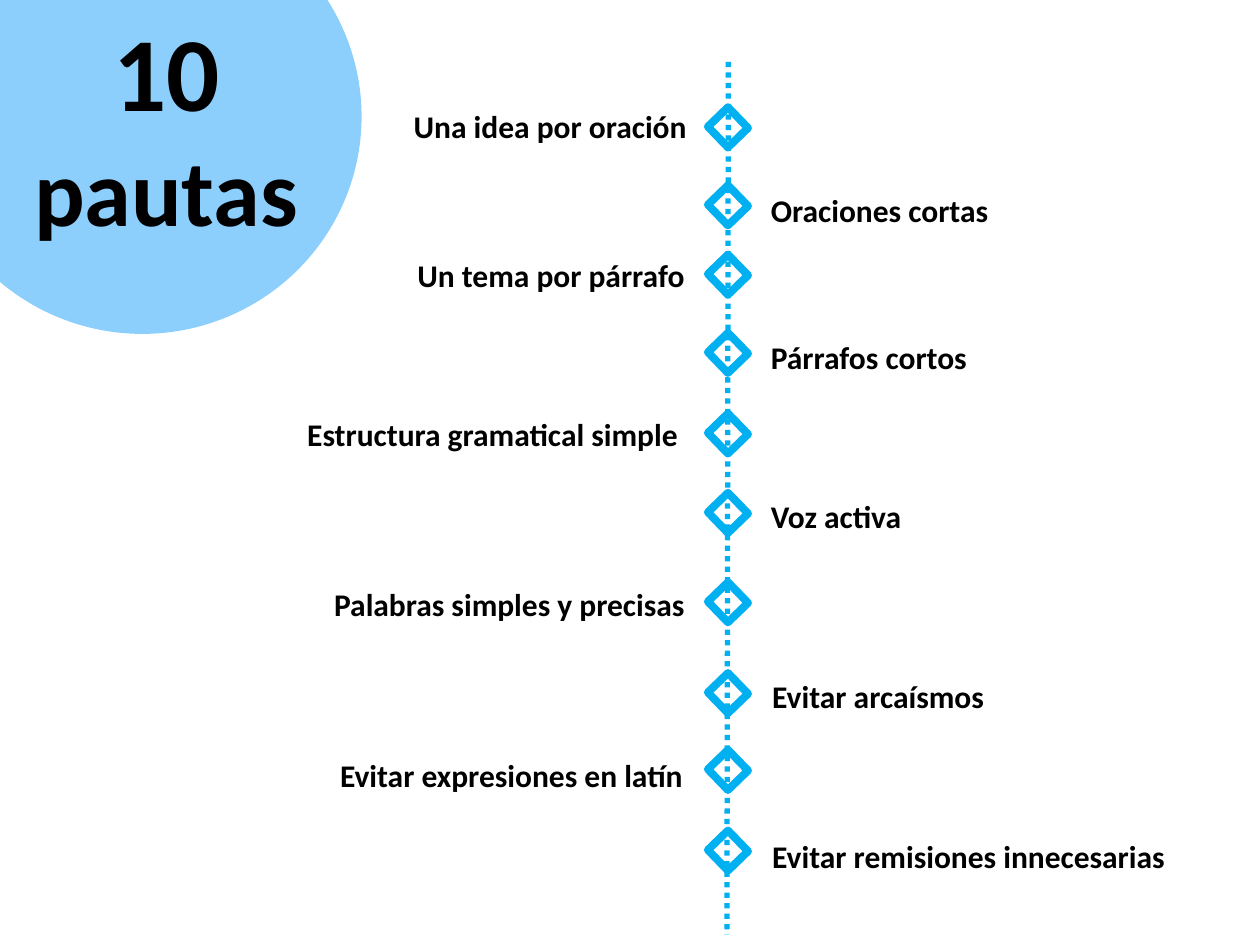
from lxml import etree
from pptx import Presentation
from pptx.dml.color import RGBColor
from pptx.enum import dml, shapes, text
from pptx.oxml.ns import qn
from pptx.util import Pt

BLUE, SKY, BLACK = "00B0F0", "8CCFFC", "000000"
LABEL_W, LABEL_H = 282, 37.5
MARKER_X, MARKER_W, MARKER_H = 407.7, 16.5, 16

# text, marker top, label top, label edge nearest the timeline
GUIDELINES = [
    ("Una idea por oración", 64.8, 49, 399.6),
    ("Oraciones cortas", 109.4, 97.2, 433.4),
    ("Un tema por párrafo", 149, 134.6, 398.4),
    ("Párrafos cortos", 193.7, 181.4, 433.4),
    ("Estructura gramatical simple", 239.8, 225.4, 394.6),
    ("Voz activa", 285.1, 272.2, 433.4),
    ("Palabras simples y precisas", 336.2, 322.6, 398.6),
    ("Evitar arcaísmos", 388.1, 375.1, 434.2),
    ("Evitar expresiones en latín", 432, 419.8, 397.4),
    ("Evitar remisiones innecesarias", 478.1, 466.6, 434.2),
]


def rgb(value):
    return RGBColor.from_string(value)


def add_run(p, words, size):
    r = p.add_run()
    r.text = words
    r.font.size, r.font.bold, r.font.name = Pt(size), True, "Calibri"
    r.font.color.rgb = rgb(BLACK)


def add_circle(s):
    sp = s.shapes.add_shape(shapes.MSO_SHAPE.OVAL,
                            Pt(-44), Pt(-57.6), Pt(250.6), Pt(248.4))
    sp.shadow.inherit = False
    sp.fill.solid()
    sp.fill.fore_color.rgb = rgb(SKY)
    sp.line.fill.background()


def add_timeline(s):
    line = s.shapes.add_connector(shapes.MSO_CONNECTOR.STRAIGHT,
                                  Pt(416.2), Pt(35.3), Pt(415.4), Pt(534.2))
    line.line.color.rgb = rgb(BLUE)
    line.line.width = Pt(3)
    line.line.dash_style = dml.MSO_LINE.ROUND_DOT
    etree.SubElement(line._element.spPr, qn("a:effectLst"))


def add_marker(s, top):
    sp = s.shapes.add_shape(shapes.MSO_SHAPE.RECTANGLE, Pt(MARKER_X), Pt(top),
                            Pt(MARKER_W), Pt(MARKER_H))
    sp.rotation = 46
    sp.shadow.inherit = False
    sp.fill.background()
    sp.line.color.rgb = rgb(BLUE)
    sp.line.width = Pt(4.5)
    etree.SubElement(sp.line._get_or_add_ln(), qn("a:round"))


def add_label(s, words, top, edge, on_left):
    left = edge - LABEL_W if on_left else edge
    tf = s.shapes.add_textbox(Pt(left), Pt(top), Pt(LABEL_W), Pt(LABEL_H)).text_frame
    tf.word_wrap = True
    tf.auto_size = text.MSO_AUTO_SIZE.SHAPE_TO_FIT_TEXT
    p = tf.paragraphs[0]
    p.alignment = text.PP_ALIGN.RIGHT if on_left else text.PP_ALIGN.LEFT
    p.line_spacing = Pt(30)
    add_run(p, words, 18)


def fill_title(s):
    """Set the two-line title and bring it in front of the circle."""
    sp = s.shapes.title
    sp.left, sp.top, sp.width, sp.height = Pt(8.6), Pt(0), Pt(172.8), Pt(145.4)
    tf = sp.text_frame
    tf.word_wrap = True
    tf.auto_size = text.MSO_AUTO_SIZE.NONE
    tf.vertical_anchor = text.MSO_ANCHOR.TOP
    for i, (words, size) in enumerate([("10", 60), ("pautas", 54)]):
        p = tf.add_paragraph() if i else tf.paragraphs[0]
        p.alignment = text.PP_ALIGN.CENTER
        p.line_spacing, p.space_before = 1.0, Pt(0)
        add_run(p, words, size)
    sp._element.getparent().append(sp._element)


def main():
    prs = Presentation()
    prs.slide_width, prs.slide_height = Pt(720), Pt(540)
    s = prs.slides.add_slide(prs.slide_layouts[5])
    add_circle(s)
    add_timeline(s)
    for i, (words, marker_top, label_top, edge) in enumerate(GUIDELINES):
        add_marker(s, marker_top)
        add_label(s, words, label_top, edge, on_left=i % 2 == 0)
    fill_title(s)
    prs.save("out.pptx")


if __name__ == "__main__":
    main()
